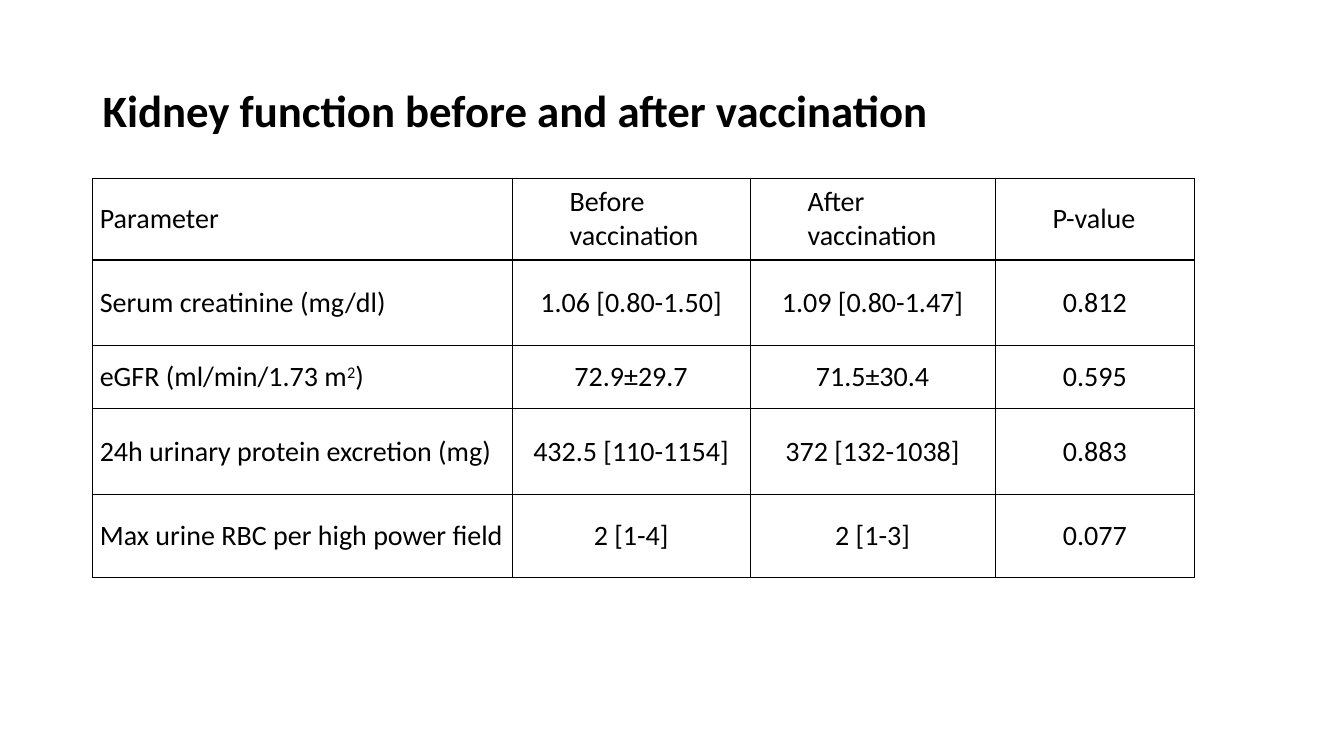
from dataclasses import dataclass

from lxml import etree
from pptx import Presentation
from pptx.dml.color import RGBColor
from pptx.enum.text import MSO_ANCHOR, PP_ALIGN
from pptx.oxml.ns import qn
from pptx.slide import Slide
from pptx.table import _Cell
from pptx.util import Inches, Pt

MIDDLE = MSO_ANCHOR.MIDDLE
LEFT, CENTER = PP_ALIGN.LEFT, PP_ALIGN.CENTER

SLIDE_W, SLIDE_H = Inches(13.33), Inches(7.5)
MARGIN = Inches(0.92)
TABLE_TOP = Inches(1.77)
COLUMN_WIDTHS = (4.16, 2.36, 2.43, 1.98)
HEADER_INDENT = Inches(0.5)
CELL_PADDING = Inches(0.07)
FONT = "Calibri"
BLACK = "000000"


@dataclass(frozen=True)
class Row:
    height: float
    label: str
    values: tuple[str, str, str]
    superscript: str = ""
    label_end: str = ""


HEADER = Row(0.81, "Parameter", ("Before vaccination", "After vaccination", "P-value"))
MEASURES = (
    Row(0.85, "Serum creatinine (mg/dl)", ("1.06 [0.80-1.50]", "1.09 [0.80-1.47]", "0.812")),
    Row(0.62, "eGFR (ml/min/1.73 m", ("72.9±29.7", "71.5±30.4", "0.595"), "2", ")"),
    Row(0.86, "24h urinary protein excretion (mg)", ("432.5 [110-1154]", "372 [132-1038]", "0.883")),
    Row(0.82, "Max urine RBC per high power field", ("2 [1-4]", "2 [1-3]", "0.077")),
)


def color(value: str) -> RGBColor:
    return RGBColor.from_string(value)


def style_paragraph(p, size: int, bold: bool = False) -> None:
    p.font.name, p.font.size, p.font.bold = FONT, Pt(size), bold
    p.font.color.rgb = color(BLACK)


def set_borders(cell: _Cell) -> None:
    tc_pr = cell._tc.get_or_add_tcPr()
    for side in ("lnL", "lnR", "lnT", "lnB"):
        line = etree.SubElement(tc_pr, qn(f"a:{side}"), w=str(Pt(1)))
        fill = etree.SubElement(line, qn("a:solidFill"))
        etree.SubElement(fill, qn("a:srgbClr"), val=BLACK)


def write_cell(cell: _Cell, text: str, align: PP_ALIGN = LEFT, indent: int = 0) -> None:
    cell.vertical_anchor = MIDDLE
    cell.margin_left = cell.margin_right = CELL_PADDING
    cell.margin_top = cell.margin_bottom = 0
    set_borders(cell)
    cell.fill.background()
    p = cell.text_frame.paragraphs[0]
    p.add_run().text = text
    p.alignment = align
    style_paragraph(p, 20)
    if indent:
        p._p.get_or_add_pPr().set("marL", str(indent))


def add_label_suffix(cell: _Cell, row: Row) -> None:
    """Append the raised part of a unit and whatever follows it."""
    p = cell.text_frame.paragraphs[0]
    r = p.add_run()
    r.text = row.superscript
    r.font._element.set("baseline", "30000")
    p.add_run().text = row.label_end


def add_title(s: Slide, text: str) -> None:
    sp = s.shapes.add_textbox(MARGIN, Inches(0.4), SLIDE_W - 2 * MARGIN, Inches(1.45))
    tf = sp.text_frame
    tf.word_wrap = True
    tf.vertical_anchor = MIDDLE
    p = tf.paragraphs[0]
    p.text = text
    p.line_spacing = 0.9
    style_paragraph(p, 32, bold=True)


def add_results_table(s: Slide) -> None:
    rows = (HEADER, *MEASURES)
    width, height = sum(COLUMN_WIDTHS), sum(row.height for row in rows)
    table = s.shapes.add_table(len(rows), len(COLUMN_WIDTHS), MARGIN, TABLE_TOP,
                               Inches(width), Inches(height)).table
    table.first_row = table.horz_banding = False
    for column, column_width in zip(table.columns, COLUMN_WIDTHS):
        column.width = Inches(column_width)
    for i, row in enumerate(rows):
        table.rows[i].height = Inches(row.height)
        write_cell(table.cell(i, 0), row.label)
        if row.superscript:
            add_label_suffix(table.cell(i, 0), row)
        align, indent = (LEFT, HEADER_INDENT) if row is HEADER else (CENTER, 0)
        for j, value in enumerate(row.values, start=1):
            write_cell(table.cell(i, j), value, align, indent)


def main() -> None:
    prs = Presentation()
    prs.slide_width, prs.slide_height = SLIDE_W, SLIDE_H
    s = prs.slides.add_slide(prs.slide_layouts[6])
    add_title(s, "Kidney function before and after vaccination")
    add_results_table(s)
    prs.save("out.pptx")


if __name__ == "__main__":
    main()
